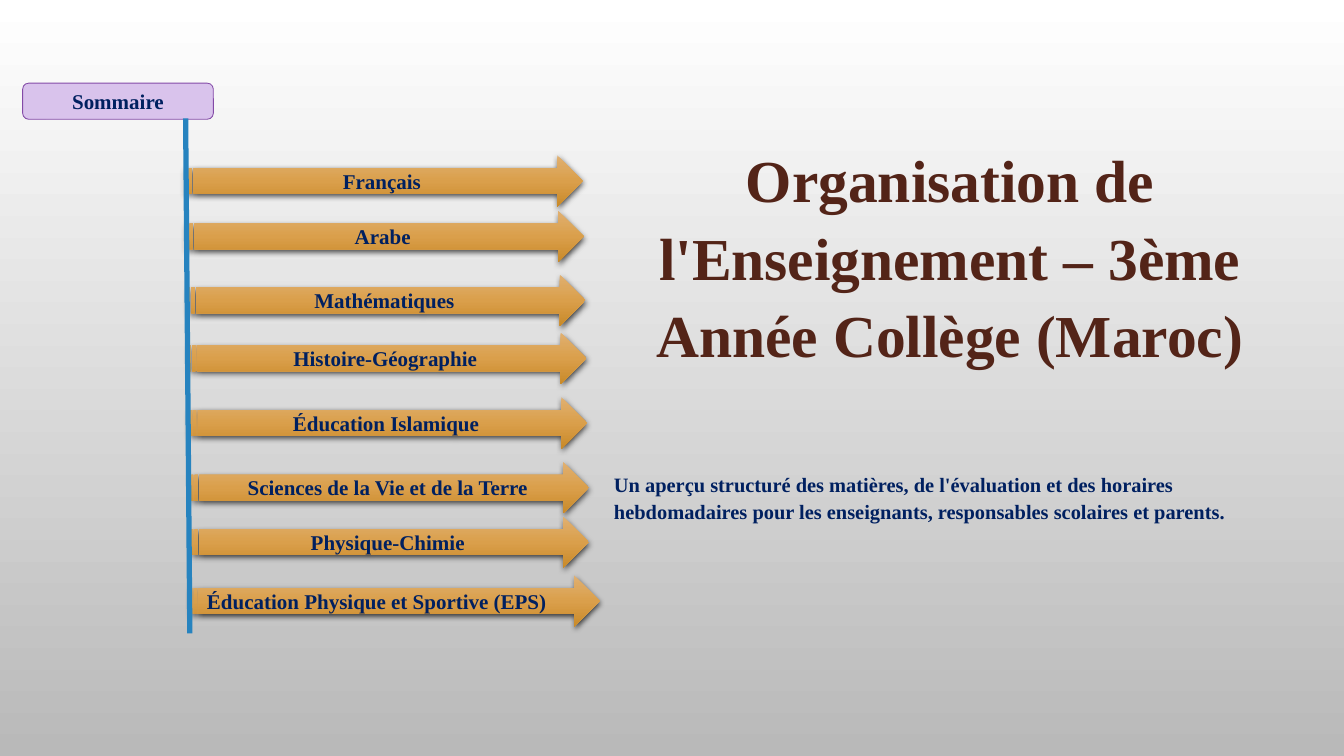
from lxml.etree import SubElement as Sub
from pptx import Presentation
from pptx.dml.color import RGBColor
from pptx.enum.shapes import MSO_CONNECTOR as Link, MSO_SHAPE as Kind
from pptx.enum.text import MSO_ANCHOR as Anchor, MSO_AUTO_SIZE as Fit, PP_ALIGN as Align
from pptx.oxml.ns import qn
from pptx.util import Inches, Pt

FONT = "Times New Roman"
NAVY = "002060"
GOLD = [(0, "E0B071"), (50, "DA9F4B"), (100, "C98A29")]
GREY = [(0, "FFFFFF"), (100, "B9B9B9")]
TOPICS = [
    ("Français", 2.21, 1.85),
    ("Arabe", 2.22, 2.51),
    ("Mathématiques", 2.24, 3.27),
    ("Histoire-Géographie", 2.25, 3.96),
    ("Éducation Islamique", 2.26, 4.73),
    ("Sciences de la Vie et de la Terre", 2.28, 5.5),
    ("Physique-Chimie", 2.28, 6.15),
]


def rgb(code):
    return RGBColor.from_string(code)


def shade(fill, root, stops):
    fill.gradient()
    fill.gradient_angle = 270
    ramp = next(root.iter(qn("a:gsLst")))
    for stop in list(ramp):
        ramp.remove(stop)
    for pos, code in stops:
        stop = Sub(ramp, qn("a:gs"), pos=str(pos * 1000))
        Sub(stop, qn("a:srgbClr"), val=code)


def write(shape, text, size, color=NAVY, align=Align.CENTER, space=None):
    frame = shape.text_frame
    frame.word_wrap = True
    frame.text = text
    para = frame.paragraphs[0]
    para.alignment = align
    if space:
        para.line_spacing = Pt(space)
    font = para.runs[0].font
    font.name, font.size, font.bold = FONT, Pt(size), True
    font.color.rgb = rgb(color)


def plain(shape):
    frame = shape.text_frame
    frame.auto_size = Fit.NONE
    frame.vertical_anchor = Anchor.TOP
    frame.margin_left = frame.margin_right = 0
    frame.margin_top = frame.margin_bottom = 0


def add_title(slide, text):
    title = slide.shapes.title
    title.left, title.top = Inches(7.18), Inches(1.63)
    title.width, title.height = Inches(8.26), Inches(2.78)
    plain(title)
    write(title, text, 51, "532418", space=66.5)


def add_note(slide, text):
    box = slide.shapes.add_textbox(Inches(7.31), Inches(5.59), Inches(8.26), Inches(0.97))
    plain(box)
    write(box, text, 17.5, align=Align.LEFT, space=23)


def add_head(slide, text):
    head = slide.shapes.add_shape(
        Kind.ROUNDED_RECTANGLE, Inches(0.27), Inches(0.99), Inches(2.27), Inches(0.43))
    head.shadow.inherit = False
    head.fill.solid()
    head.fill.fore_color.rgb = rgb("D9C3EC")
    head.line.color.rgb = rgb("834AA7")
    head.line.width = Pt(0.75)
    head.text_frame.vertical_anchor = Anchor.MIDDLE
    write(head, text, 18)


def add_arrow(slide, text, left, top, width=4.73, align=Align.CENTER):
    arrow = slide.shapes.add_shape(
        Kind.STRIPED_RIGHT_ARROW, Inches(left), Inches(top), Inches(width), Inches(0.61))
    shade(arrow.fill, arrow.element, GOLD)
    arrow.line.fill.background()
    arrow.shadow.inherit = False
    glow = Sub(arrow.element.spPr.find(qn("a:effectLst")), qn("a:outerShdw"),
               blurRad=str(Pt(5)), dist=str(Pt(2)), dir="5400000", rotWithShape="0")
    Sub(Sub(glow, qn("a:srgbClr"), val="000000"), qn("a:alpha"), val="69000")
    arrow.text_frame.vertical_anchor = Anchor.MIDDLE
    write(arrow, text, 18, align=align)


def add_spine(slide):
    spine = slide.shapes.add_connector(
        Link.STRAIGHT, Inches(2.21), Inches(1.41), Inches(2.26), Inches(7.54))
    spine.line.color.rgb = rgb("2683BF")
    spine.line.width = Pt(4.5)
    Sub(spine.element.spPr, qn("a:effectLst"))


def main():
    deck = Presentation()
    deck.slide_width, deck.slide_height = Inches(16), Inches(9)
    slide = deck.slides.add_slide(deck.slide_layouts[5])
    shade(slide.background.fill, slide.element, GREY)
    add_title(slide, "Organisation de l'Enseignement – 3ème Année Collège (Maroc)")
    add_note(slide, "Un aperçu structuré des matières, de l'évaluation et des horaires "
             "hebdomadaires pour les enseignants, responsables scolaires et parents.")
    add_head(slide, "Sommaire")
    for text, left, top in TOPICS:
        add_arrow(slide, text, left, top)
    add_arrow(slide, "Éducation Physique et Sportive (EPS)", 2.27, 6.85, 4.87, Align.LEFT)
    add_spine(slide)
    deck.save("out.pptx")


if __name__ == "__main__":
    main()
